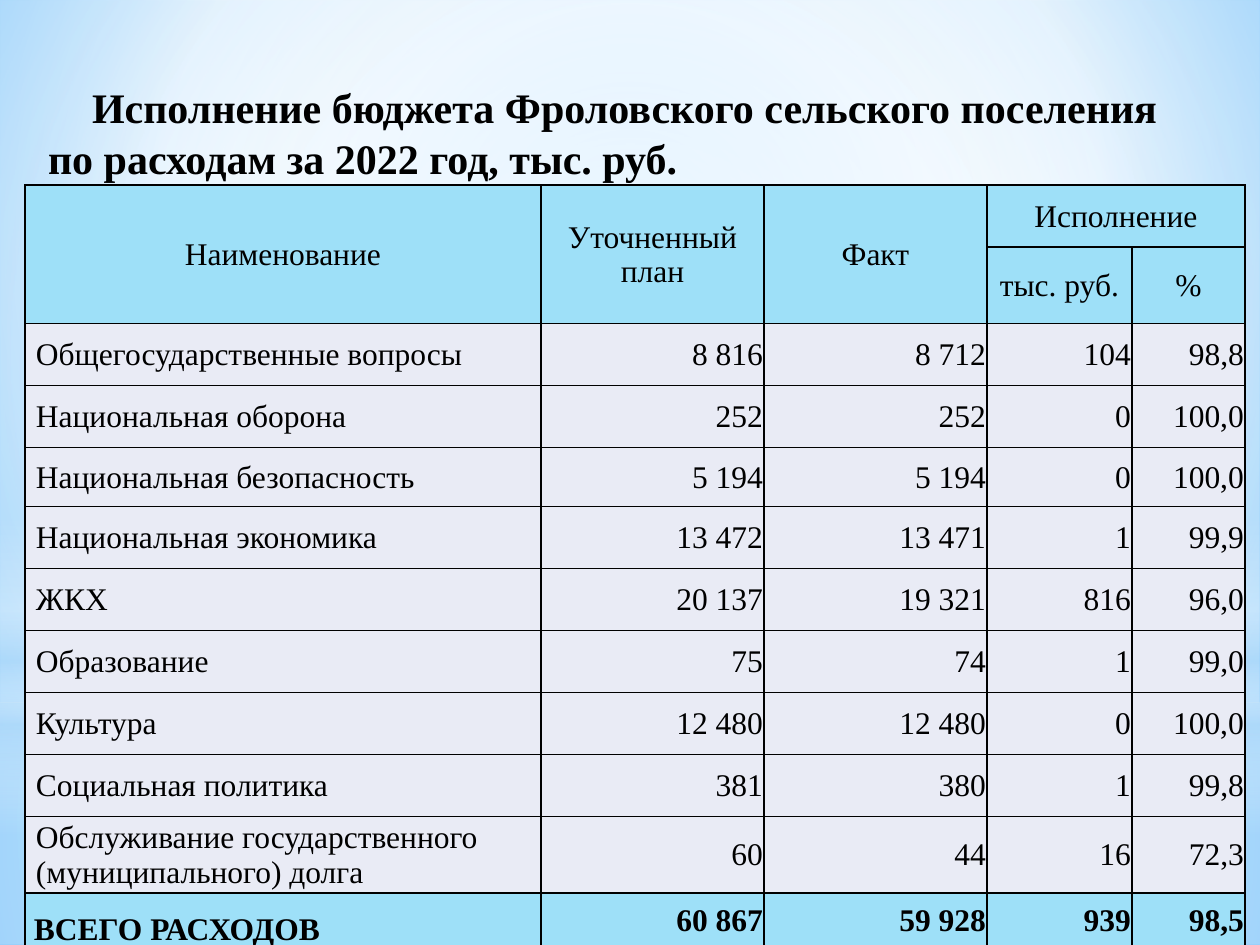
"""Build a slide with a table of budget spending for 2022."""
from lxml import etree
from pptx import Presentation
from pptx.dml.color import RGBColor
from pptx.enum.shapes import MSO_SHAPE
from pptx.enum.text import MSO_ANCHOR, PP_ALIGN
from pptx.oxml.ns import qn
from pptx.util import Emu, Pt

RECT, OVAL = MSO_SHAPE.RECTANGLE, MSO_SHAPE.OVAL
LEFT, CENTER, RIGHT = PP_ALIGN.LEFT, PP_ALIGN.CENTER, PP_ALIGN.RIGHT
MIDDLE, BOTTOM = MSO_ANCHOR.MIDDLE, MSO_ANCHOR.BOTTOM

BLACK = RGBColor(0x00, 0x00, 0x00)
WHITE = RGBColor(0xFF, 0xFF, 0xFF)
SKY = RGBColor(0x9E, 0xD5, 0xFF)
BLUE = RGBColor(0x5B, 0xB9, 0xFF)
HAZE = RGBColor(0xB4, 0xDC, 0xFA)
HEADER = RGBColor(0x9E, 0xE0, 0xF8)
BODY = RGBColor(0xE9, 0xEB, 0xF5)

FONT = "Times New Roman"
EMU_PER_PX = 914400 / 126
MIDPOINT = (50, 50, 50, 50)

BACKDROP = [(0, SKY, 100), (60, WHITE, 100), (100, BLUE, 100)]
GLOWS = [
    (RECT, (0, 703, 1260, 242), [(0, WHITE, 91), (37, WHITE, 76), (100, HAZE, 79)], MIDPOINT),
    (RECT, (0, 0, 1260, 703), [(0, WHITE, 89), (48, WHITE, 62), (100, HAZE, 79)], MIDPOINT),
    (RECT, (0, 519, 1260, 315), [(0, WHITE, 0), (29, WHITE, 30), (45, HAZE, 40),
                                 (55, WHITE, 26), (65, HAZE, 60), (100, WHITE, 0)], None),
    (OVAL, (0, 221, 1260, 703), [(0, WHITE, 100), (56, WHITE, 0)], MIDPOINT),
]

TITLE = [("Исполнение бюджета Фроловского сельского поселения", 44),
         ("по расходам за 2022 год, тыс. руб.", 0)]
COLUMNS = [516, 223, 223, 145, 113]
HEIGHTS = [62, 71, 62, 62, 59, 62, 62, 62, 62, 62, 72, 54]
MERGES = [(0, 0, 1, 0), (0, 1, 1, 1), (0, 2, 1, 2), (0, 3, 0, 4)]
ROWS = [
    ("Наименование", "Уточненный план", "Факт", "Исполнение", ""),
    ("", "", "", "тыс. руб.", "%"),
    ("Общегосударственные вопросы", "8 816", "8 712", "104", "98,8"),
    ("Национальная оборона", "252", "252", "0", "100,0"),
    ("Национальная безопасность", "5 194", "5 194", "0", "100,0"),
    ("Национальная экономика", "13 472", "13 471", "1", "99,9"),
    ("ЖКХ", "20 137", "19 321", "816", "96,0"),
    ("Образование", "75", "74", "1", "99,0"),
    ("Культура", "12 480", "12 480", "0", "100,0"),
    ("Социальная политика", "381", "380", "1", "99,8"),
    ("Обслуживание государственного (муниципального) долга", "60", "44", "16", "72,3"),
    ("ВСЕГО РАСХОДОВ", "60 867", "59 928", "939", "98,5"),
]


def px(n):
    """Turn pixels into EMU."""
    return Emu(round(n * EMU_PER_PX))


def set_gradient(fill, element, stops, focus):
    """Fill with a circular gradient, or a vertical one when there is no focus."""
    fill.gradient()
    grad = next(element.iter(qn("a:gradFill")))
    for child in list(grad):
        grad.remove(child)
    stop_list = etree.SubElement(grad, qn("a:gsLst"))
    for pos, color, alpha in stops:
        stop = etree.SubElement(stop_list, qn("a:gs"), pos=str(pos * 1000))
        clr = etree.SubElement(stop, qn("a:srgbClr"), val=str(color))
        if alpha < 100:
            etree.SubElement(clr, qn("a:alpha"), val=str(alpha * 1000))
    if focus:
        shade = etree.SubElement(grad, qn("a:path"), path="circle")
        sides = {side: str(n * 1000) for side, n in zip("ltrb", focus)}
        etree.SubElement(shade, qn("a:fillToRect"), **sides)
    else:
        etree.SubElement(grad, qn("a:lin"), ang="5400000", scaled="0")


def add_glow(slide, kind, box, stops, focus):
    """Add a borderless gradient shape."""
    sp = slide.shapes.add_shape(kind, *map(px, box))
    sp.shadow.inherit = False
    sp.line.fill.background()
    set_gradient(sp.fill, sp.element, stops, focus)


def style_font(font, size, bold):
    """Set the common look of text."""
    font.name, font.size, font.bold = FONT, Pt(size), bold
    font.color.rgb = BLACK


def add_title(slide):
    """Add the two-line title."""
    tf = slide.shapes.add_textbox(*map(px, (48, 81, 1166, 102))).text_frame
    tf.word_wrap = True
    tf.margin_left = tf.margin_right = tf.margin_top = tf.margin_bottom = 0
    for i, (text, indent) in enumerate(TITLE):
        p = tf.add_paragraph() if i else tf.paragraphs[0]
        p.text = text
        p.alignment = LEFT
        p.line_spacing = Pt(29)
        p._p.get_or_add_pPr().set("indent", str(px(indent)))
        style_font(p.font, 24, True)


def set_borders(cell):
    """Draw a thin black line on each side of a cell."""
    tc_pr = cell._tc.get_or_add_tcPr()
    for side in ("lnL", "lnR", "lnT", "lnB"):
        ln = etree.SubElement(tc_pr, qn(f"a:{side}"), w=str(Pt(1)))
        solid = etree.SubElement(ln, qn("a:solidFill"))
        etree.SubElement(solid, qn("a:srgbClr"), val=str(BLACK))


def fill_cell(cell, text, row, col):
    """Write and style a cell by its place in the table."""
    header, total = row < 2, row == len(ROWS) - 1
    label = col == 0 and not header
    cell.margin_left = px((9 if total else 11) if label else 1)
    cell.margin_right = cell.margin_top = px(1)
    cell.margin_bottom = 0
    cell.vertical_anchor = BOTTOM if label and total else MIDDLE
    set_borders(cell)
    cell.fill.solid()
    cell.fill.fore_color.rgb = HEADER if header or total else BODY
    p = cell.text_frame.paragraphs[0]
    p.text = text
    p.alignment = CENTER if header else LEFT if label else RIGHT
    style_font(p.font, 18, total)


def add_budget_table(slide):
    """Add the spending table."""
    box = map(px, (25, 185, sum(COLUMNS), sum(HEIGHTS)))
    table = slide.shapes.add_table(len(ROWS), len(COLUMNS), *box).table
    table.first_row = table.horz_banding = False
    for column, width in zip(table.columns, COLUMNS):
        column.width = px(width)
    for r, (values, height) in enumerate(zip(ROWS, HEIGHTS)):
        table.rows[r].height = px(height)
        for c, text in enumerate(values):
            fill_cell(table.cell(r, c), text, r, c)
    for top, left, bottom, right in MERGES:
        table.cell(top, left).merge(table.cell(bottom, right))


def main():
    """Build and save the slide."""
    prs = Presentation()
    prs.slide_width, prs.slide_height = px(1260), px(945)
    slide = prs.slides.add_slide(prs.slide_layouts[6])
    set_gradient(slide.background.fill, slide.element, BACKDROP, (20, 10, 20, 60))
    for glow in GLOWS:
        add_glow(slide, *glow)
    add_title(slide)
    add_budget_table(slide)
    prs.save("out.pptx")


if __name__ == "__main__":
    main()
